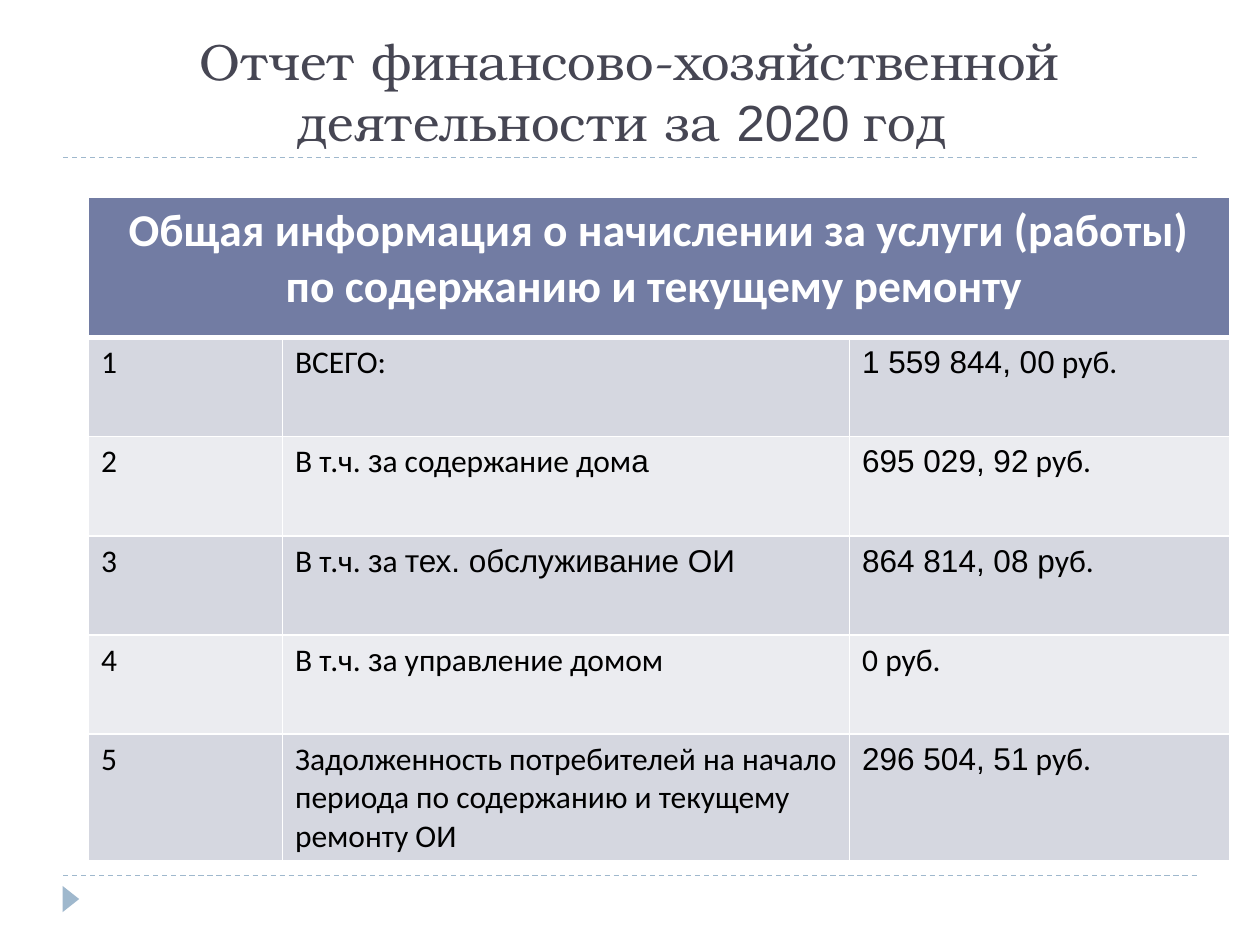
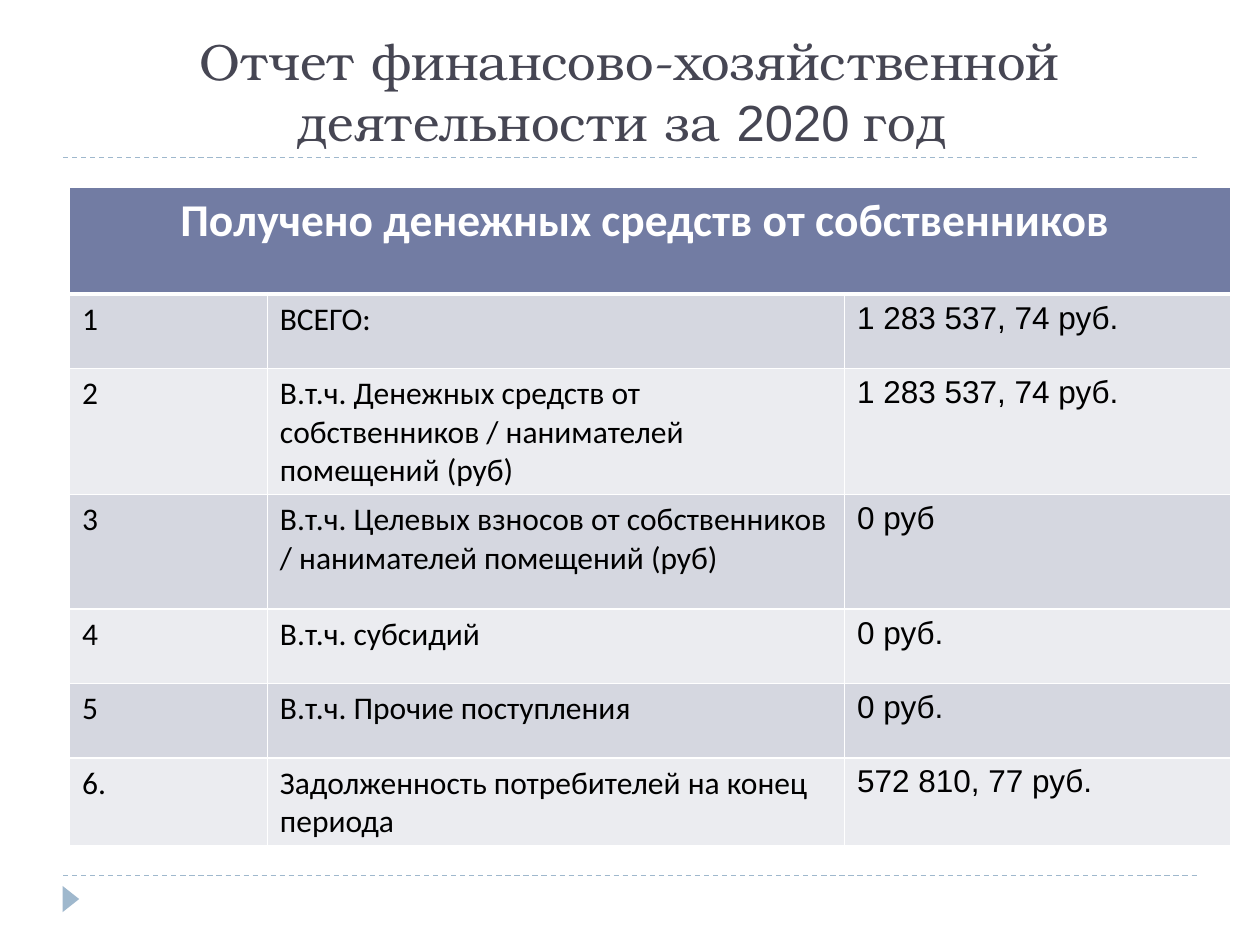
from lxml.etree import SubElement
from pptx import Presentation
from pptx.dml.color import RGBColor
from pptx.enum.dml import MSO_LINE_DASH_STYLE as Dash
from pptx.enum.shapes import MSO_CONNECTOR as Connector, MSO_SHAPE as Shape
from pptx.enum.text import MSO_ANCHOR as Anchor, PP_ALIGN as Align
from pptx.oxml.ns import qn
from pptx.util import Pt

# Shared look
SERIF, SANS, DIGITS = "TeX Gyre Bonum", "Calibri", "Arial"
TITLE_COLOR, ACCENT, HEADER = "464653", "9FB8CD", "727CA3"
BANDS = ("D5D7E0", "EBECF0")
WHITE, BLACK = "FFFFFF", "000000"
MARGIN, CONTENT_WIDTH = 36, 648
RULES = (90, 500.4)

# Text between bars is set in Arial: "base|arial|base"
TITLE = "Отчет финансово-хозяйственной деятельности за |2020 |год "

CHARGES = dict(
    left=50.6, top=112.5,
    widths=(110.9, 324, 217.4),
    heights=(80.3, 56.7, 56.7, 56.7, 56.7, 57.6),
    heading="Общая информация о начислении за услуги (работы) "
            "по содержанию и текущему ремонту ",
    rows=(
        ("1", "ВСЕГО:", "|1 559 844, 00| руб."),
        ("2", "В т.ч. |з|а содержание дом|а", "|695 029, 92| руб."),
        ("3", "В т.ч. |з|а |тех. обслуживание ОИ", "|864 814, 08 р|уб."),
        ("4", "В т.ч. |з|а управление домом", "0 руб."),
        ("5", "Задолженность потребителей на начало периода "
              "по содержанию и текущему ремонту ОИ", "|296 504, 51| руб."),
    ),
)

RECEIPTS = dict(
    left=39.8, top=106.9,
    widths=(113, 329.8, 221),
    heights=(61.2, 42.5, 65.5, 65.5, 42.5, 42.5, 46.1),
    heading="Получено денежных средств от собственников ",
    rows=(
        ("1", "ВСЕГО:", "|1 283 537, 74 руб."),
        ("2", "В.т.ч. Денежных средств от собственников / "
              "нанимателей помещений (руб)", "|1 283 537, 74 руб."),
        ("3", "В.т.ч. Целевых взносов от собственников / "
              "нанимателей помещений (руб)", "|0 руб"),
        ("4", "В.т.ч. субсидий", "|0 руб."),
        ("5", "В.т.ч. Прочие поступления", "|0 руб."),
        ("6.", "Задолженность потребителей на конец периода",
         "|572 810, 77 руб."),
    ),
)


def rgb(color):
    return RGBColor.from_string(color)


def write(frame, text, *, font=SANS, size=18, color=BLACK, bold=False,
          align=Align.LEFT):
    frame.word_wrap = True
    para = frame.paragraphs[0]
    para.alignment = align
    for index, piece in enumerate(text.split("|")):
        if not piece:
            continue
        span = para.add_run()
        span.text = piece
        span.font.name = DIGITS if index % 2 else font
        span.font.size = Pt(size)
        span.font.bold = bold
        span.font.color.rgb = rgb(color)


def add_rule(page, y):
    rule = page.shapes.add_connector(
        Connector.STRAIGHT, Pt(MARGIN), Pt(y), Pt(MARGIN + CONTENT_WIDTH), Pt(y))
    rule.line.color.rgb = rgb(ACCENT)
    rule.line.width = Pt(0.75)
    rule.line.dash_style = Dash.DASH
    SubElement(rule._element.spPr, qn("a:effectLst"))


def add_marker(page):
    marker = page.shapes.add_shape(
        Shape.ISOSCELES_TRIANGLE, Pt(33), Pt(509), Pt(15), Pt(9.5))
    marker.rotation = 90
    marker.shadow.inherit = False
    marker.fill.solid()
    marker.fill.fore_color.rgb = rgb(ACCENT)
    marker.line.fill.background()


def add_title(page):
    box = page.shapes.add_textbox(
        Pt(MARGIN), Pt(18), Pt(CONTENT_WIDTH), Pt(72))
    box.text_frame.vertical_anchor = Anchor.BOTTOM
    write(box.text_frame, TITLE, font=SERIF, size=29, color=TITLE_COLOR,
          align=Align.CENTER)


def paint_cell(cell, fill, top=1, bottom=1):
    # Borders come before the fill in the cell properties
    properties = cell._tc.get_or_add_tcPr()
    for side, width in (("L", 1), ("R", 1), ("T", top), ("B", bottom)):
        edge = SubElement(properties, qn(f"a:ln{side}"), w=str(Pt(width)))
        solid = SubElement(edge, qn("a:solidFill"))
        SubElement(solid, qn("a:srgbClr"), val=WHITE)
    cell.fill.solid()
    cell.fill.fore_color.rgb = rgb(fill)


def add_report_table(page, left, top, widths, heights, heading, rows):
    table = page.shapes.add_table(
        len(heights), len(widths), Pt(left), Pt(top),
        Pt(sum(widths)), Pt(sum(heights))).table
    table.horz_banding = False
    for column, width in zip(table.columns, widths):
        column.width = Pt(width)
    for row, height in zip(table.rows, heights):
        row.height = Pt(height)

    # Heading across all columns
    for cell in table.rows[0].cells:
        paint_cell(cell, HEADER, bottom=3)
    table.cell(0, 0).merge(table.cell(0, len(widths) - 1))
    write(table.cell(0, 0).text_frame, heading, size=26, color=WHITE,
          bold=True, align=Align.CENTER)

    # Banded body
    for number, texts in enumerate(rows, 1):
        for cell, text in zip(table.rows[number].cells, texts):
            paint_cell(cell, BANDS[(number - 1) % 2], top=3 if number == 1 else 1)
            write(cell.text_frame, text)


def add_page(deck, report):
    page = deck.slides.add_slide(deck.slide_layouts[6])
    for y in reversed(RULES):
        add_rule(page, y)
    add_marker(page)
    add_title(page)
    add_report_table(page, **report)


def main():
    deck = Presentation()
    deck.slide_width, deck.slide_height = Pt(720), Pt(540)
    for report in (CHARGES, RECEIPTS):
        add_page(deck, report)
    deck.save("out.pptx")


if __name__ == "__main__":
    main()
